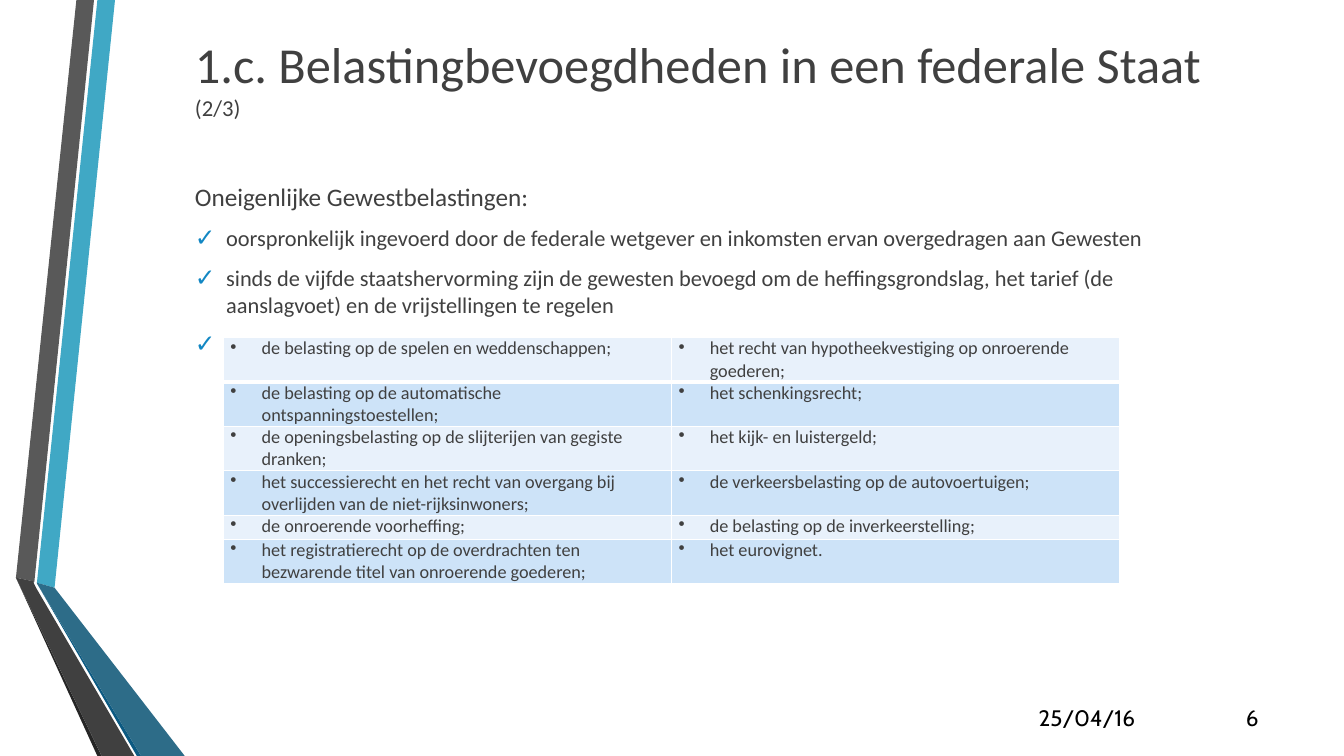
"""Build the slide on improper regional taxes."""
from lxml import etree
from pptx import Presentation, util as u
from pptx.dml.color import RGBColor
from pptx.enum import text as t
from pptx.oxml import ns

TEAL = RGBColor(0x40, 0xA8, 0xC5)
GREY = RGBColor(0x59, 0x59, 0x59)
COAL = RGBColor(0x26, 0x26, 0x26)
NAVY = RGBColor(0x0C, 0x5A, 0x82)
SEA = RGBColor(0x2D, 0x6C, 0x88)
DARK = RGBColor(0x40, 0x40, 0x40)
BLACK = RGBColor(0, 0, 0)
WHITE = RGBColor(255, 255, 255)
BLUE = RGBColor(0x12, 0x87, 0xC3)
PALE = RGBColor(0xE8, 0xF1, 0xFB)
SKY = RGBColor(0xCD, 0xE3, 0xF8)

deck = Presentation()
deck.slide_width, deck.slide_height = u.Inches(13.33), u.Inches(7.5)
COL, ROW = deck.slide_width / 16, deck.slide_height / 12
slide = deck.slides.add_slide(deck.slide_layouts[1])
items = slide.shapes


def grid(*cells):
    """Turn column and row counts into lengths."""
    return [round(n * (ROW if i % 2 else COL)) for i, n in enumerate(cells)]


def bullet(para, sign, *marks):
    """Hang a paragraph from a bullet sign."""
    props = para._p.get_or_add_pPr()
    props.set("marL", str(u.Inches(0.31)))
    props.set("indent", str(-u.Inches(0.31)))
    for mark in marks:
        props.append(mark)
    etree.SubElement(props, ns.qn("a:buChar"), char=sign)
    return props


ribbons = [
    (TEAL, [(0.44, 9.25), (0.65, 9.33), (1.37, 0), (1.16, 0)]),
    (GREY, [(1.12, 0), (0.91, 0), (0.19, 9.17), (0.41, 9.23)]),
    (COAL, [(0.19, 9.17), (1.16, 12), (1.21, 12)]),
    (NAVY, [(0.44, 9.26), (1.63, 12), (1.68, 12)]),
    (SEA, [(0.44, 9.26), (1.68, 12), (2.2, 12), (0.65, 9.33), (0.44, 9.25)]),
    (DARK, [(1.6, 12), (0.43, 9.33), (0.4, 9.25), (0.41, 9.23), (0.19, 9.17), (1.21, 12)]),
]
for color, dots in ribbons:
    start, *rest = [grid(*dot) for dot in dots]
    pen = items.build_freeform(*start)
    pen.add_line_segments(rest, close=True)
    band = pen.convert_to_shape()
    band.shadow.inherit = False
    band.fill.solid()
    band.fill.fore_color.rgb = color
    band.line.fill.background()

title = items.title
title.left, title.top, title.width, title.height = grid(2.2, 0.62, 12.9, 1.2)
frame = title.text_frame
frame.auto_size = t.MSO_AUTO_SIZE.NONE
frame.vertical_anchor = t.MSO_ANCHOR.MIDDLE
head = frame.paragraphs[0]
head.alignment = t.PP_ALIGN.LEFT
for words, size in [("1.c. Belastingbevoegdheden in een federale Staat ", 36), ("(2/3)", 16.2)]:
    run = head.add_run()
    run.text = words
    run.font.size, run.font.name = u.Pt(size), "Calibri"
    run.font.color.rgb = DARK

body = slide.placeholders[1]
body.left, body.top, body.width, body.height = grid(2.2, 2.8, 11.77, 7.26)
frame = body.text_frame
frame.auto_size = t.MSO_AUTO_SIZE.NONE
points = [
    "Oneigenlijke Gewestbelastingen:",
    "oorspronkelijk ingevoerd door de federale wetgever en inkomsten ervan overgedragen aan Gewesten",
    "sinds de vijfde staatshervorming zijn de gewesten bevoegd om de heffingsgrondslag, "
    "het tarief (de aanslagvoet) en de vrijstellingen te regelen",
    " ",
]
for i, words in enumerate(points):
    para = frame.add_paragraph() if i else frame.paragraphs[0]
    para.text = words
    if i:
        tint = etree.Element(ns.qn("a:buClr"))
        etree.SubElement(tint, ns.qn("a:srgbClr"), val=str(BLUE))
        bullet(para, "✓", tint, etree.Element(ns.qn("a:buSzPct"), val="110000"))
    else:
        props = para._p.get_or_add_pPr()
        props.set("marL", "0")
        props.set("indent", "0")
        etree.SubElement(props, ns.qn("a:buNone"))
    para.space_before, para.space_after = u.Pt(3.2 if i else 0), u.Pt(6)
    para.font.size, para.font.name = u.Pt(16 if i else 18), "Calibri"
    para.font.color.rgb = DARK

taxes = [
    ("de belasting op de spelen en weddenschappen;",
     "het recht van hypotheekvestiging op onroerende goederen;"),
    ("de belasting op de automatische ontspanningstoestellen;", "het schenkingsrecht;"),
    ("de openingsbelasting op de slijterijen van gegiste dranken;", "het kijk- en luistergeld;"),
    ("het successierecht en het recht van overgang bij overlijden van de niet-rijksinwoners;",
     "de verkeersbelasting op de autovoertuigen;"),
    ("de onroerende voorheffing;", "de belasting op de inverkeerstelling;"),
    ("het registratierecht op de overdrachten ten bezwarende titel van onroerende goederen;",
     "het eurovignet."),
]
highs = [0.61, 0.66, 0.66, 0.66, 0.38, 0.66]
table = items.add_table(6, 2, *grid(2.66, 5.36, 10.67, sum(highs))).table
table.first_row = table.horz_banding = False
for r, pair in enumerate(taxes):
    table.rows[r].height = round(highs[r] * ROW)
    for c, words in enumerate(pair):
        cell = table.cell(r, c)
        cell.margin_left = cell.margin_right = u.Inches(0.07)
        cell.margin_top = cell.margin_bottom = 0
        cell.fill.solid()
        cell.fill.fore_color.rgb = SKY if r % 2 else PALE
        para = cell.text_frame.paragraphs[0]
        para.text = words
        tabs = etree.SubElement(bullet(para, "•"), ns.qn("a:tabLst"))
        etree.SubElement(tabs, ns.qn("a:tab"), pos=str(u.Inches(1)), algn="l")
        para.font.size, para.font.name = u.Pt(13), "Calibri"
        para.font.color.rgb = DARK
        for i, side in enumerate("LRTB"):
            thick = (r, side) in [(0, "B"), (1, "T")]
            edge = etree.Element(ns.qn("a:ln" + side), w=str(u.Pt(3 if thick else 1)))
            fill = etree.SubElement(edge, ns.qn("a:solidFill"))
            etree.SubElement(fill, ns.qn("a:srgbClr"), val=str(WHITE))
            cell._tc.get_or_add_tcPr().insert(i, edge)

for words, left, wide, side in [
    ("25/04/16", 12.19, 1.5, t.PP_ALIGN.CENTER),
    ("6", 14.38, 0.72, t.PP_ALIGN.RIGHT),
]:
    frame = items.add_textbox(*grid(left, 11.04, wide, 0.64)).text_frame
    frame.word_wrap = True
    frame.vertical_anchor = t.MSO_ANCHOR.BOTTOM
    para = frame.paragraphs[0]
    para.text, para.alignment = words, side
    para.font.size, para.font.name = u.Pt(16), "Cabin"
    para.font.color.rgb = BLACK

deck.save("out.pptx")
